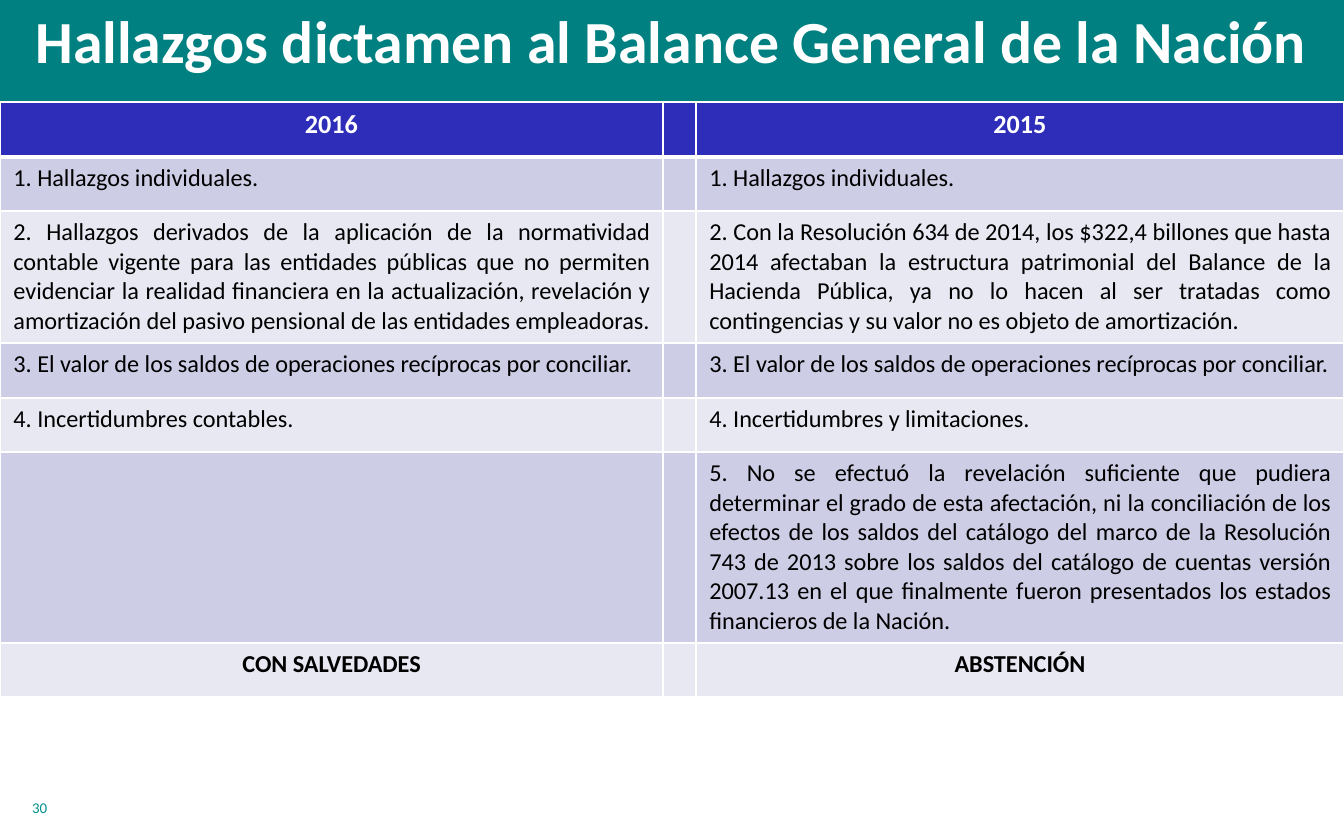
from lxml import etree
from pptx import Presentation
from pptx.dml.color import RGBColor
from pptx.enum.shapes import MSO_SHAPE
from pptx.enum.text import MSO_ANCHOR, MSO_AUTO_SIZE, PP_ALIGN
from pptx.oxml.ns import qn
from pptx.util import Emu, Pt

# Content
TITLE = "Hallazgos dictamen al Balance General de la Nación"
PAGE_NUMBER = "30"
HEADINGS = ("2016", "2015")
FINDINGS = [
    ("1. Hallazgos individuales.", "1. Hallazgos individuales."),
    ("2. Hallazgos derivados de la aplicación de la normatividad contable vigente para las "
     "entidades públicas que no permiten evidenciar la realidad financiera en la actualización, "
     "revelación y amortización del pasivo pensional de las entidades empleadoras.",
     "2. Con la Resolución 634 de 2014, los $322,4 billones que hasta 2014 afectaban la "
     "estructura patrimonial del Balance de la Hacienda Pública, ya no lo hacen al ser tratadas "
     "como contingencias y su valor no es objeto de amortización."),
    ("3. El valor de los saldos de operaciones recíprocas por conciliar.",
     "3. El valor de los saldos de operaciones recíprocas por conciliar."),
    ("4. Incertidumbres contables.", "4. Incertidumbres y limitaciones."),
    ("",
     "5. No se efectuó la revelación suficiente que pudiera determinar el grado de esta "
     "afectación, ni la conciliación de los efectos de los saldos del catálogo del marco de la "
     "Resolución 743 de 2013 sobre los saldos del catálogo de cuentas versión 2007.13 en el que "
     "finalmente fueron presentados los estados financieros de la Nación."),
]
OPINIONS = ("CON SALVEDADES", "ABSTENCIÓN")

# Layout in px
SCALE = 914400 / 134.4
WIDTH, HEIGHT = 1344, 840
TABLE_TOP = 102
COLUMN_WIDTHS = (663, 33, 648)
ROW_HEIGHTS = (55, 54, 132, 55, 54, 191, 54)
TEAL, HEADER_BLUE, BANDS = "008080", "2D2DB9", ("E8E8F3", "CDCDE6")


def px(length):
    return Emu(round(length * SCALE))


def color(value):
    return RGBColor.from_string(value)


def write(frame, text, size=13, ink="000000", bold=False, align=PP_ALIGN.LEFT):
    para = frame.paragraphs[0]
    para.alignment = align
    span = para.add_run()
    span.text = text
    span.font.name = "Calibri"
    span.font.size = Pt(size)
    span.font.bold = bold
    span.font.color.rgb = color(ink)


def style_cell(cell, fill, top_width, bottom_width):
    widths = {"a:lnL": 1, "a:lnR": 1, "a:lnT": top_width, "a:lnB": bottom_width}
    properties = cell._tc.get_or_add_tcPr()
    for tag, points in widths.items():
        line = etree.SubElement(properties, qn(tag), w=str(Pt(points)))
        solid = etree.SubElement(line, qn("a:solidFill"))
        etree.SubElement(solid, qn("a:srgbClr"), val="FFFFFF")
    cell.fill.solid()
    cell.fill.fore_color.rgb = color(fill)


deck = Presentation()
deck.slide_width, deck.slide_height = px(WIDTH), px(HEIGHT)
page = deck.slides.add_slide(deck.slide_layouts[5])

# Title band, placed behind the title
band = page.shapes.add_shape(MSO_SHAPE.RECTANGLE, px(-5), px(-3), px(1349), px(156))
band.shadow.inherit = False
band.fill.solid()
band.fill.fore_color.rgb = color(TEAL)
band.line.fill.background()
page.shapes._spTree.insert(2, band._element)

# Title
title = page.shapes.title
title.left, title.top, title.width, title.height = px(0), px(-3), px(WIDTH), px(158)
title.text_frame.word_wrap = True
title.text_frame.auto_size = MSO_AUTO_SIZE.NONE
title.text_frame.vertical_anchor = MSO_ANCHOR.TOP
write(title.text_frame, TITLE, size=32, ink="FFFFFF", bold=True, align=PP_ALIGN.CENTER)

# Page number
number = page.shapes.add_textbox(px(19), px(792), px(280), px(40))
number.text_frame.word_wrap = True
write(number.text_frame, PAGE_NUMBER, size=8, ink="00918E")

# Comparison table: a narrow empty column separates the two years
rows = [HEADINGS, *FINDINGS, OPINIONS]
table = page.shapes.add_table(len(rows), len(COLUMN_WIDTHS), px(0), px(TABLE_TOP),
                              px(WIDTH), px(sum(ROW_HEIGHTS))).table
for column, width in zip(table.columns, COLUMN_WIDTHS):
    column.width = px(width)

heading_format = dict(size=14, ink="FFFFFF", bold=True, align=PP_ALIGN.CENTER)
finding_format = dict(align=PP_ALIGN.JUSTIFY)
opinion_format = dict(bold=True, align=PP_ALIGN.CENTER)
formats = [heading_format, *[finding_format] * len(FINDINGS), opinion_format]

for index, ((left, right), text_format) in enumerate(zip(rows, formats)):
    table.rows[index].height = px(ROW_HEIGHTS[index])
    fill = BANDS[index % 2] if index else HEADER_BLUE
    for cell, text in zip(table.rows[index].cells, (left, "", right)):
        style_cell(cell, fill, 3 if index == 1 else 1, 3 if index == 0 else 1)
        if text:
            write(cell.text_frame, text, **text_format)

deck.save("out.pptx")
